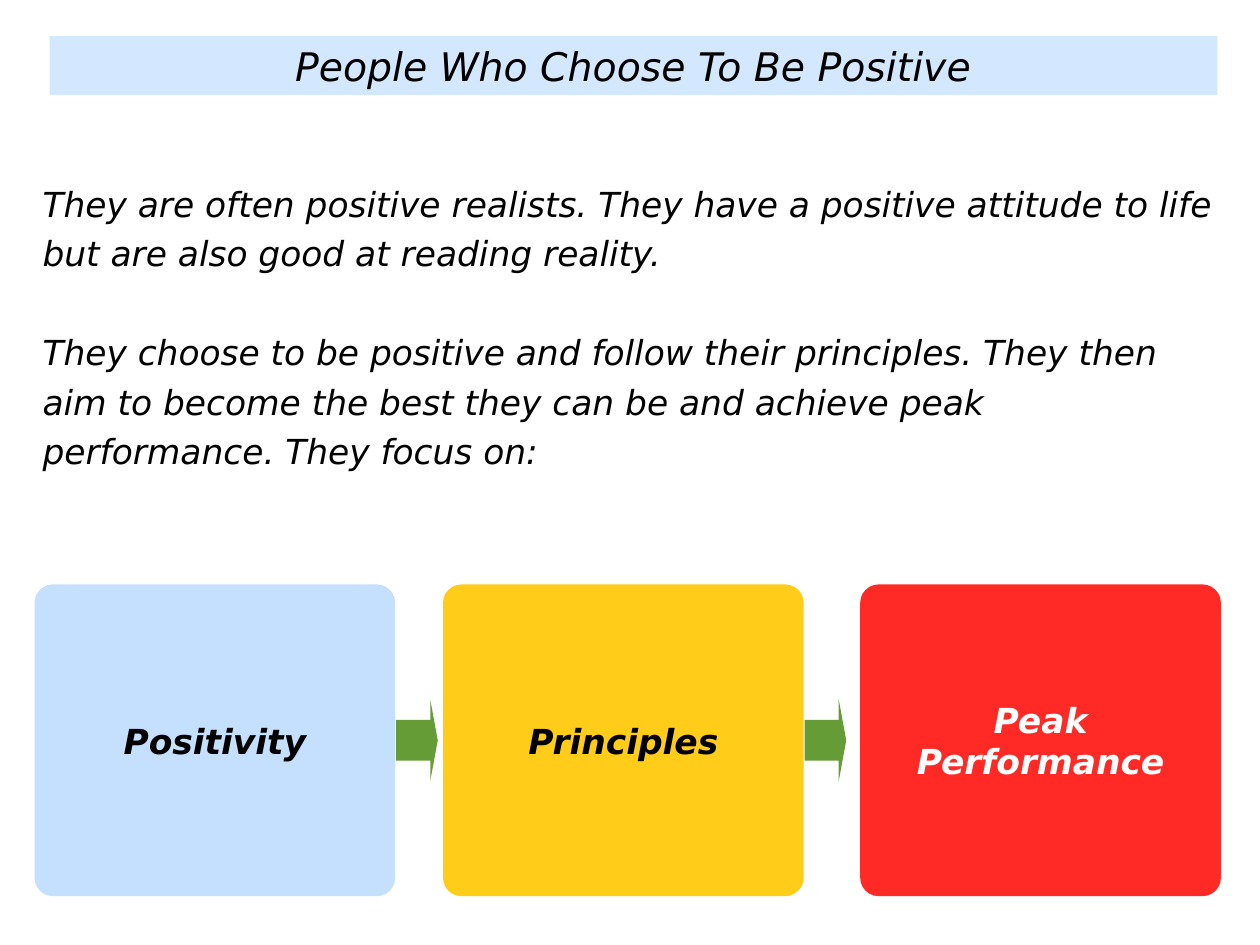
from pptx import Presentation
from pptx.dml.color import RGBColor
from pptx.enum.shapes import MSO_SHAPE
from pptx.enum.text import MSO_ANCHOR, PP_ALIGN
from pptx.util import Cm, Pt

BLACK = RGBColor(0x00, 0x00, 0x00)
WHITE = RGBColor(0xFF, 0xFF, 0xFF)
PALE = RGBColor(0xD3, 0xE8, 0xFF)
BLUE = RGBColor(0xC5, 0xDF, 0xFE)
GOLD = RGBColor(0xFF, 0xCC, 0x1A)
RED = RGBColor(0xFF, 0x29, 0x25)
GREEN = RGBColor(0x66, 0x9C, 0x35)

FONT = "DejaVu Sans"

BODY = [
    "They are often positive realists. They have a positive attitude to life "
    "but are also good at reading reality.",
    "They choose to be positive and follow their principles. They then aim to "
    "become the best they can be and achieve peak performance. They focus on:",
]

# Label, left edge in cm, fill, text colour
STEPS = [
    ("Positivity", 0.99, BLUE, BLACK),
    ("Principles", 12.7, GOLD, BLACK),
    ("Peak Performance", 24.66, RED, WHITE),
]
TOP, WIDTH, HEIGHT = 16.76, 10.34, 8.94
ARROW_W, ARROW_H = 1.19, 2.34


def write(shape, paras, size=28, color=BLACK, bold=False, align=PP_ALIGN.CENTER,
          anchor=MSO_ANCHOR.MIDDLE, inset=0.1, side=0.1, line=1.0, gap=0):
    frame = shape.text_frame
    frame.word_wrap = True
    frame.vertical_anchor = anchor
    frame.margin_top = frame.margin_bottom = Cm(inset)
    frame.margin_left = frame.margin_right = Cm(side)
    for i, text in enumerate(paras):
        para = frame.add_paragraph() if i else frame.paragraphs[0]
        para.alignment = align
        para.line_spacing = line
        para.space_before = Pt(gap if i else 0)
        run = para.add_run()
        run.text = text
        font = run.font
        font.name, font.size = FONT, Pt(size)
        font.bold, font.italic = bold, True
        font.color.rgb = color


def block(slide, kind, left, top, width, height, fill, adjust=()):
    shape = slide.shapes.add_shape(kind, Cm(left), Cm(top), Cm(width), Cm(height))
    shape.shadow.inherit = False
    shape.fill.solid()
    shape.fill.fore_color.rgb = fill
    shape.line.fill.background()
    for i, value in enumerate(adjust):
        shape.adjustments[i] = value
    return shape


def arrow(slide, left):
    top = TOP + (HEIGHT - ARROW_H) / 2
    block(slide, MSO_SHAPE.RIGHT_ARROW, left, top, ARROW_W, ARROW_H, GREEN, (0.5, 0.18))


def step(slide, label, left, fill, color):
    box = block(slide, MSO_SHAPE.ROUNDED_RECTANGLE, left, TOP, WIDTH, HEIGHT, fill, (0.059,))
    write(box, [label], color=color, bold=True, side=0.38)


def main():
    deck = Presentation()
    deck.slide_width, deck.slide_height = Cm(36.12), Cm(27.1)
    slide = deck.slides.add_slide(deck.slide_layouts[6])

    # Title bar
    title = block(slide, MSO_SHAPE.RECTANGLE, 1.42, 1.04, 33.48, 1.68, PALE)
    write(title, ["People Who Choose To Be Positive"], size=32, inset=0.15, side=0.15)

    # Body text
    body = slide.shapes.add_textbox(Cm(1.12), Cm(4.9), Cm(33.86), Cm(8.61))
    write(body, BODY, align=PP_ALIGN.LEFT, anchor=MSO_ANCHOR.TOP, line=1.2, gap=40)

    # Steps, with an arrow after each but the last
    for label, left, fill, color in STEPS:
        step(slide, label, left, fill, color)
    for _, left, _, _ in STEPS[:-1]:
        arrow(slide, left + WIDTH + 0.03)

    deck.save("out.pptx")


if __name__ == "__main__":
    main()
